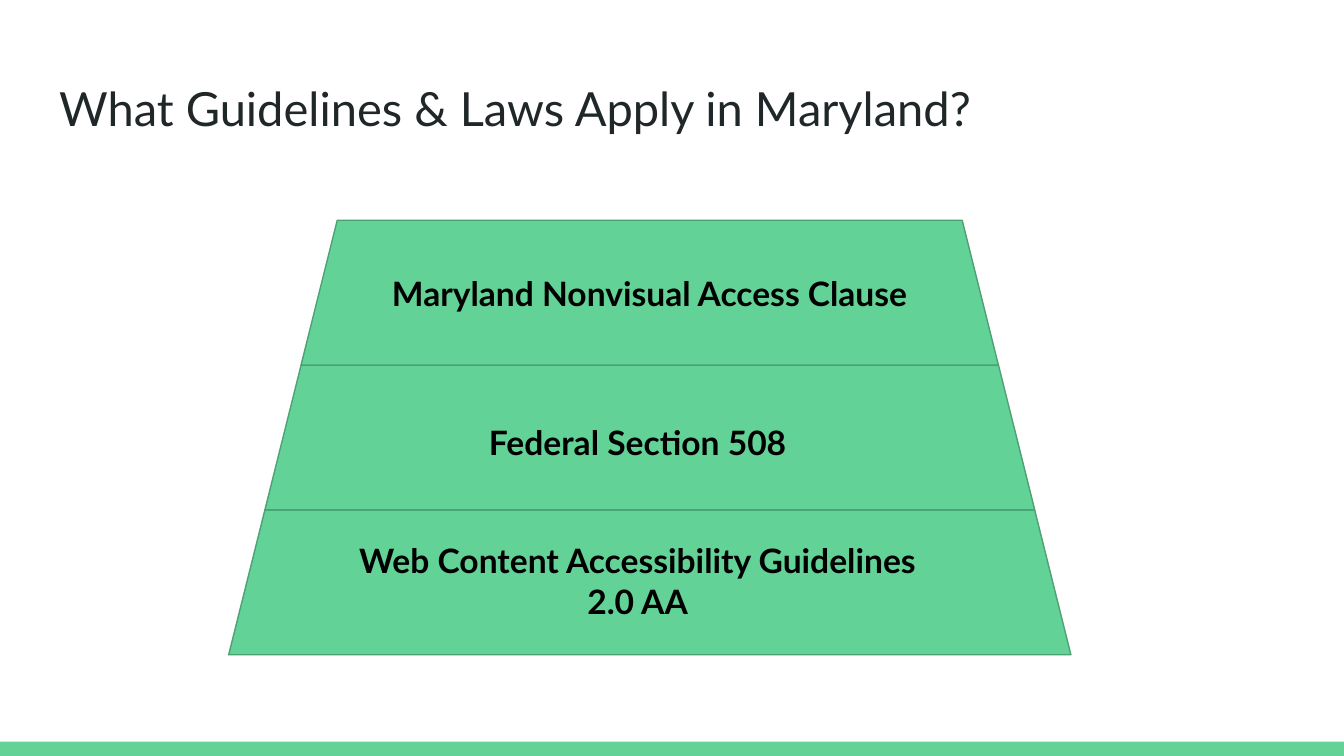
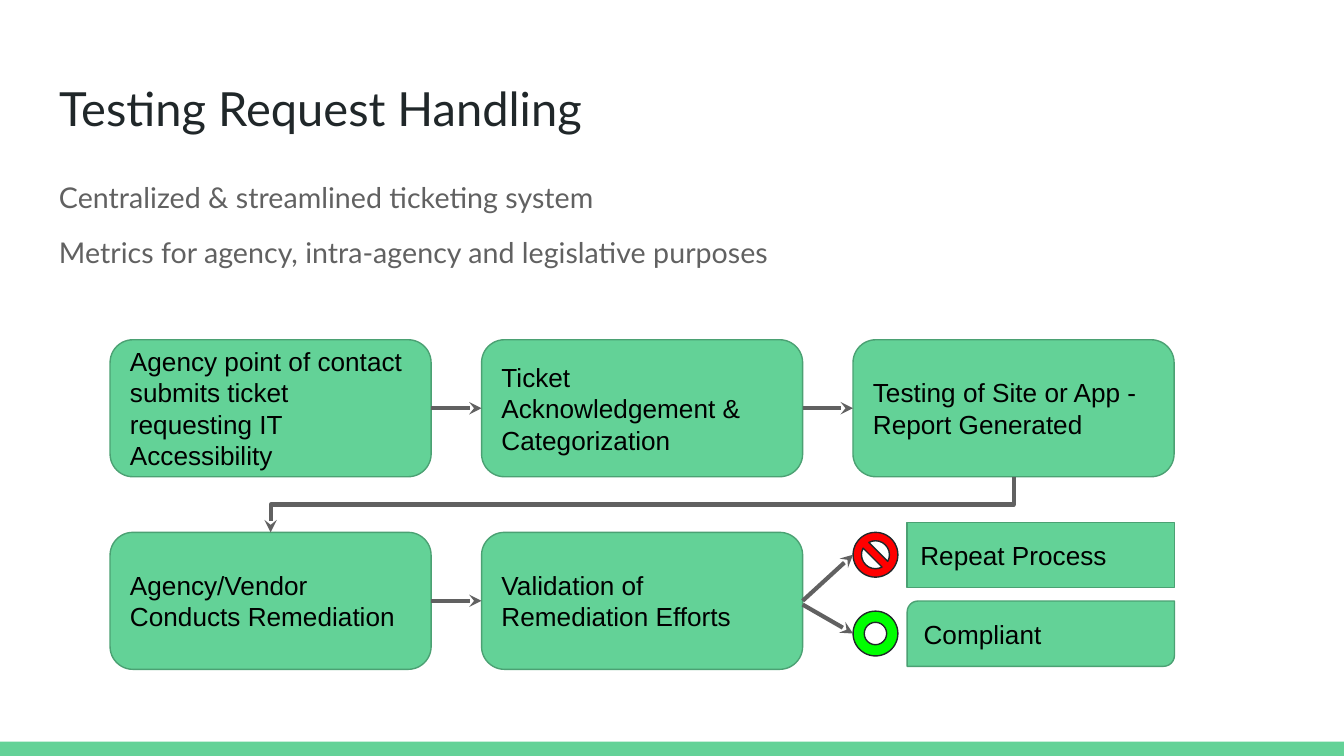
import pptx
import pptx.dml.color
import pptx.enum.shapes
import pptx.enum.text
import pptx.oxml.ns
import pptx.oxml.xmlchemy
import pptx.util

Pt = pptx.util.Pt
MSO = pptx.enum.shapes.MSO_SHAPE
LINE = pptx.enum.shapes.MSO_CONNECTOR
ALIGN = pptx.enum.text.PP_ALIGN
ANCHOR = pptx.enum.text.MSO_ANCHOR
FIT = pptx.enum.text.MSO_AUTO_SIZE

GREEN, GREEN_EDGE = "63D297", "4BA173"
INK, GREY, BLACK = "202729", "616161", "000000"
RED, LIME = "FF0000", "00FF00"
TOP, LEFT, BOTTOM, RIGHT = range(4)

TITLE = {"name": "Lato", "size": Pt(25.2), "color": INK}
BODY = {"name": "Lato", "size": Pt(15.3), "color": GREY}
LABEL = {"name": "Lato", "size": Pt(18), "bold": True, "color": BLACK}
STEP = {"name": "Arial", "size": Pt(14), "color": BLACK}

MARGIN, TEXT_W = 24.5, 671


def rgb(value):
    return pptx.dml.color.RGBColor.from_string(value)


def sub(parent, tag, **attrs):
    """Append a DrawingML child element."""
    el = pptx.oxml.xmlchemy.OxmlElement(tag)
    for key, value in attrs.items():
        el.set(key, value)
    parent.append(el)


class Deck:
    def __init__(self):
        self.prs = pptx.Presentation()
        self.prs.slide_width, self.prs.slide_height = Pt(720), Pt(405)
        self.layout = self.prs.slide_layouts[5]
        self.s = None

    def slide(self, title):
        first = self.s is None
        self.s = self.prs.slides.add_slide(self.layout)
        if first:
            self.layout_band()
        sp = self.s.shapes.title
        place = {"left": MARGIN, "top": 35.3, "width": TEXT_W, "height": 45.4}
        for key, value in place.items():
            setattr(sp, key, Pt(value))
        self.fill_text(sp, [title], TITLE)

    def layout_band(self):
        """Move a green footer band from the current slide to its layout."""
        el = self.shape(MSO.RECTANGLE, (0, 397.4, 720, 7.6), edge=None)._element
        el.nvSpPr.cNvPr.id = 100
        self.layout.shapes._spTree.insert(2, el)

    def fill_text(self, sp, lines, style, align=ALIGN.LEFT, anchor=ANCHOR.TOP,
                  fit=FIT.NONE, **spacing):
        tf = sp.text_frame
        frame = {"word_wrap": True, "auto_size": fit, "vertical_anchor": anchor}
        frame.update({f"margin_{side}": Pt(7.2)
                      for side in ("left", "top", "right", "bottom")})
        for key, value in frame.items():
            setattr(tf, key, value)
        for i, line in enumerate(lines):
            p = tf.add_paragraph() if i else tf.paragraphs[0]
            p.alignment = align
            for key, value in spacing.items():
                if i or key == "line_spacing":
                    setattr(p, key, value)
            r = p.add_run()
            r.text = line
            for key, value in style.items():
                if key == "color":
                    r.font.color.rgb = rgb(value)
                else:
                    setattr(r.font, key, value)

    def text(self, box, lines, style, **options):
        sp = self.s.shapes.add_textbox(*map(Pt, box))
        self.fill_text(sp, lines, style, **options)

    def shape(self, kind, box, text=None, fill=GREEN, edge=GREEN_EDGE, adj=()):
        sp = self.s.shapes.add_shape(kind, *map(Pt, box))
        sp.shadow.inherit = False
        sp.fill.solid()
        sp.fill.fore_color.rgb = rgb(fill)
        if edge:
            sp.line.color.rgb = rgb(edge)
            sp.line.width = Pt(0.75)
        else:
            sp.line.fill.background()
        for i, value in enumerate(adj):
            sp.adjustments[i] = value
        if text:
            self.fill_text(sp, [text], STEP, anchor=ANCHOR.MIDDLE)
        return sp

    def connector(self, kind, start, end, arrow="a:tailEnd"):
        c = self.s.shapes.add_connector(kind, *start, *end)
        c.line.color.rgb = rgb(GREY)
        c.line.width = Pt(2.25)
        sub(c.line._get_or_add_ln(), arrow, type="stealth")
        sub(c._element.spPr, "a:effectLst")
        return c

    def arrow(self, a, b):
        """Join the right side of a to the left side of b."""
        c = self.connector(LINE.STRAIGHT, (0, 0), (0, 0))
        c.begin_connect(a, RIGHT)
        c.end_connect(b, LEFT)

    def branch(self, a, icon, drop=0):
        """Point from the right side of a to the left edge of a round icon."""
        start = a.left + a.width, a.top + a.height // 2 + Pt(drop)
        end = icon.left, icon.top + icon.height // 2
        c = self.connector(LINE.STRAIGHT, start, end)
        if not drop:
            c.begin_connect(a, RIGHT)

    def return_arrow(self, upper, lower):
        """Run an elbow from the bottom of upper to the top of lower."""
        c = self.connector(LINE.ELBOW, (0, 0), (0, 0), "a:headEnd")
        c.begin_connect(lower, TOP)
        c.end_connect(upper, BOTTOM)
        x1, y1 = lower.left + lower.width // 2, lower.top
        x2, y2 = upper.left + upper.width // 2, upper.top + upper.height
        c.width, c.height = y1 - y2, x2 - x1
        c.left = (x1 + x2 - c.width) // 2
        c.top = (y1 + y2 - c.height) // 2
        xfrm = c._element.spPr.find(pptx.oxml.ns.qn("a:xfrm"))
        xfrm.flipH = xfrm.flipV = False
        xfrm.set("rot", "16200000")


def laws_slide(d):
    d.slide("What Guidelines & Laws Apply in Maryland?")
    center, top, height, top_width = 348.1, 118, 77.6, 373.6
    tiers = [
        ("Maryland Nonvisual Access Clause", (187.2, 139, 321.8, 36)),
        ("Federal Section 508", (246.2, 218.9, 190.8, 36)),
        ("Web Content Accessibility Guidelines 2.0 AA",
         (180.7, 282.2, 321.8, 58.3)),
    ]
    for i, (label, box) in reversed(list(enumerate(tiers))):
        width = top_width + i * height / 2
        d.shape(MSO.TRAPEZOID,
                (center - width / 2, top + i * height, width, height),
                adj=[0.25])
        d.text(box, [label], LABEL, align=ALIGN.CENTER,
               fit=FIT.SHAPE_TO_FIT_TEXT)


def testing_slide(d):
    d.slide("Testing Request Handling")
    d.text((MARGIN, 90.7, TEXT_W, 73.4),
           ["Centralized & streamlined ticketing system",
            "Metrics for agency, intra-agency and legislative purposes"],
           BODY, line_spacing=0.95, space_before=Pt(12), space_after=Pt(12))

    left, top, pitch_x, pitch_y = 59, 182, 199, 103.2
    steps = [
        ["Agency point of contact submits ticket requesting IT Accessibility",
         "Ticket Acknowledgement & Categorization",
         "Testing of Site or App - Report Generated"],
        ["Agency/Vendor Conducts Remediation",
         "Validation of Remediation Efforts"],
    ]
    rows = [[d.shape(MSO.FLOWCHART_ALTERNATE_PROCESS,
                     (left + col * pitch_x, top + row * pitch_y, 172, 73.4),
                     text)
             for col, text in enumerate(texts)]
            for row, texts in enumerate(steps)]
    for row in rows:
        for a, b in zip(row, row[1:]):
            d.arrow(a, b)
    d.return_arrow(rows[0][-1], rows[1][0])

    outcomes = [
        ("Repeat Process", MSO.FLOWCHART_PROCESS, [],
         MSO.NO_SYMBOL, RED, 0.188, 0),
        ("Compliant", MSO.ROUND_2_DIAG_RECTANGLE, [0.167, 0],
         MSO.DONUT, LIME, 0.25, 2),
    ]
    for i, (text, box, adj, symbol, color, ring, drop) in enumerate(outcomes):
        y = 279.8 + i * 42.2
        icon = d.shape(symbol, (457, y + 5.4, 24, 24), fill=color, edge=INK,
                       adj=[ring])
        d.branch(rows[1][-1], icon, drop)
        d.shape(box, (486, y, 143.2, 35), text, adj=adj)


def main():
    d = Deck()
    laws_slide(d)
    testing_slide(d)
    d.prs.save("out.pptx")


if __name__ == "__main__":
    main()
